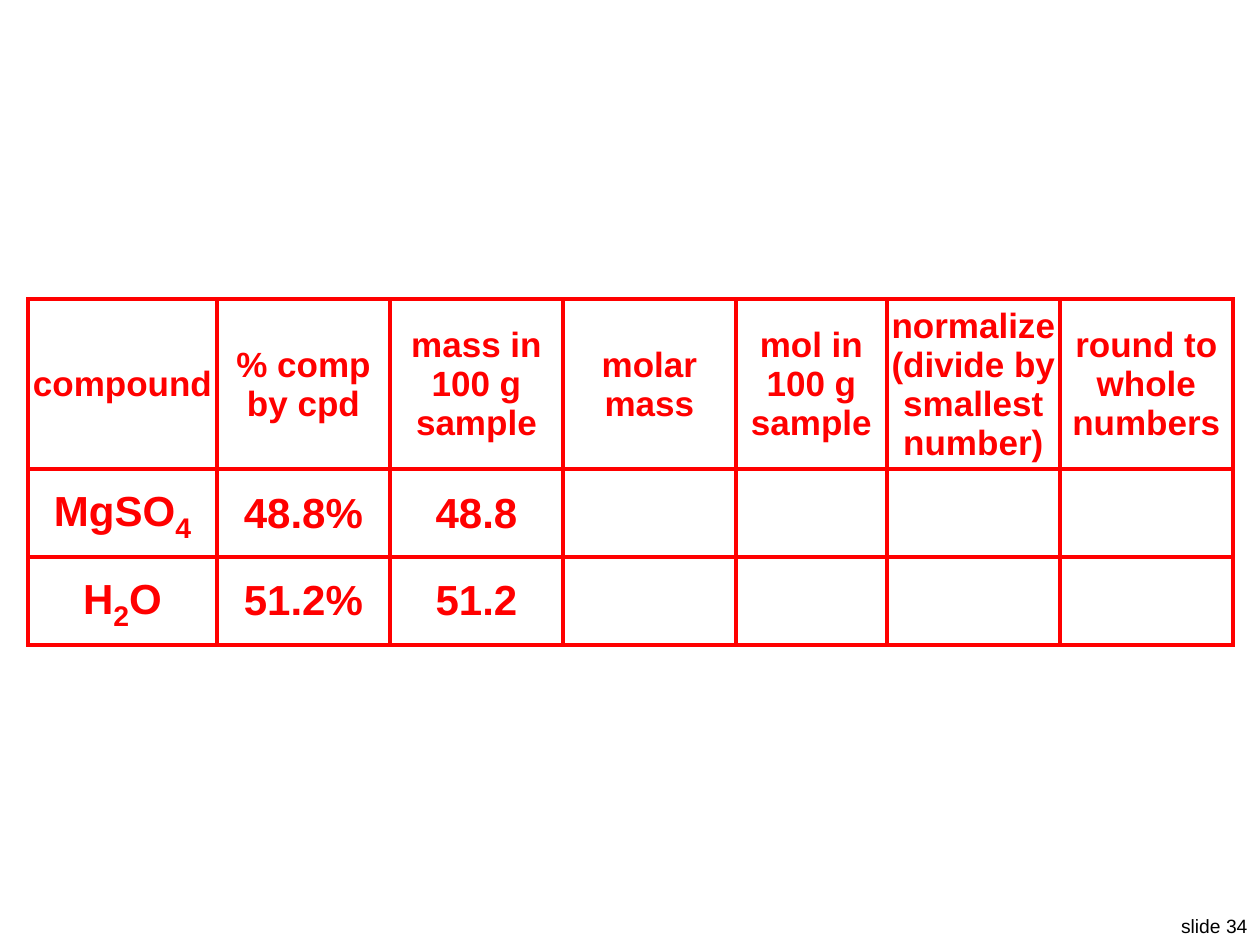
from lxml import etree
from pptx import Presentation
from pptx.dml.color import RGBColor
from pptx.enum.text import MSO_ANCHOR, PP_ALIGN
from pptx.oxml.ns import qn
from pptx.util import Emu, Pt

CENTER, RIGHT = PP_ALIGN.CENTER, PP_ALIGN.RIGHT
MIDDLE = MSO_ANCHOR.MIDDLE

COLORS = {"red": "FF0000", "black": "000000", "white": "FFFFFF"}
FONT = "Arial"
HEADER_SIZE, BODY_SIZE, SUB_SIZE = 20, 24, 28
BORDER_PT = 2.25

HEADER = [
    "compound", "% comp by cpd", "mass in 100 g sample", "molar mass",
    "mol in 100 g sample", "normalize (divide by smallest number)",
    "round to whole numbers",
]
COMPOUNDS = [
    ["MgSO_4", "48.8%", "48.8", "", "", "", ""],
    ["H_2_O", "51.2%", "51.2", "", "", "", ""],
]
FOOTER = "slide 34"

COL_WIDTHS = [189, 173, 173, 173, 151, 173, 173]
ROW_HEIGHTS = [170, 88, 88]
TABLE_LEFT, TABLE_TOP = 28, 299
FOOTER_BOX = (1166, 908, 94, 37)


def px(n):
    return Emu(round(n * 914400 / 126))


def write(tf, text, size, color, align, bold=False):
    p = tf.paragraphs[0]
    p.alignment = align
    for i, part in enumerate(text.split("_")):
        if not part:
            continue
        r = p.add_run()
        r.text = part
        f = r.font
        f.name, f.bold = FONT, bold
        f.size = Pt(SUB_SIZE if i % 2 else size)
        f.color.rgb = RGBColor.from_string(COLORS[color])
        if i % 2:
            f._element.set("baseline", "-25000")


def add_borders(cell, color):
    tcPr = cell._tc.get_or_add_tcPr()
    for i, side in enumerate(("lnL", "lnR", "lnT", "lnB")):
        ln = etree.Element(qn(f"a:{side}"), w=str(Pt(BORDER_PT)))
        fill = etree.SubElement(ln, qn("a:solidFill"))
        etree.SubElement(fill, qn("a:srgbClr"), val=COLORS[color])
        tcPr.insert(i, ln)


def add_compound_table(slide):
    rows = [HEADER] + COMPOUNDS
    table = slide.shapes.add_table(
        len(rows), len(HEADER), px(TABLE_LEFT), px(TABLE_TOP),
        px(sum(COL_WIDTHS)), px(sum(ROW_HEIGHTS))).table
    for col, width in zip(table.columns, COL_WIDTHS):
        col.width = px(width)
    for i, (row, height) in enumerate(zip(rows, ROW_HEIGHTS)):
        table.rows[i].height = px(height)
        for j, text in enumerate(row):
            cell = table.cell(i, j)
            cell.margin_left = cell.margin_right = cell.margin_top = px(1)
            cell.margin_bottom = 0
            cell.vertical_anchor = MIDDLE
            cell.fill.solid()
            cell.fill.fore_color.rgb = RGBColor.from_string(COLORS["white"])
            add_borders(cell, "red")
            write(cell.text_frame, text, BODY_SIZE if i else HEADER_SIZE,
                  "red", CENTER, bold=True)


def main():
    prs = Presentation()
    prs.slide_width, prs.slide_height = px(1260), px(945)
    slide = prs.slides.add_slide(prs.slide_layouts[6])
    sp = slide.shapes.add_textbox(*map(px, FOOTER_BOX))
    sp.text_frame.word_wrap = False
    write(sp.text_frame, FOOTER, 11, "black", RIGHT)
    add_compound_table(slide)
    prs.save("out.pptx")


if __name__ == "__main__":
    main()
